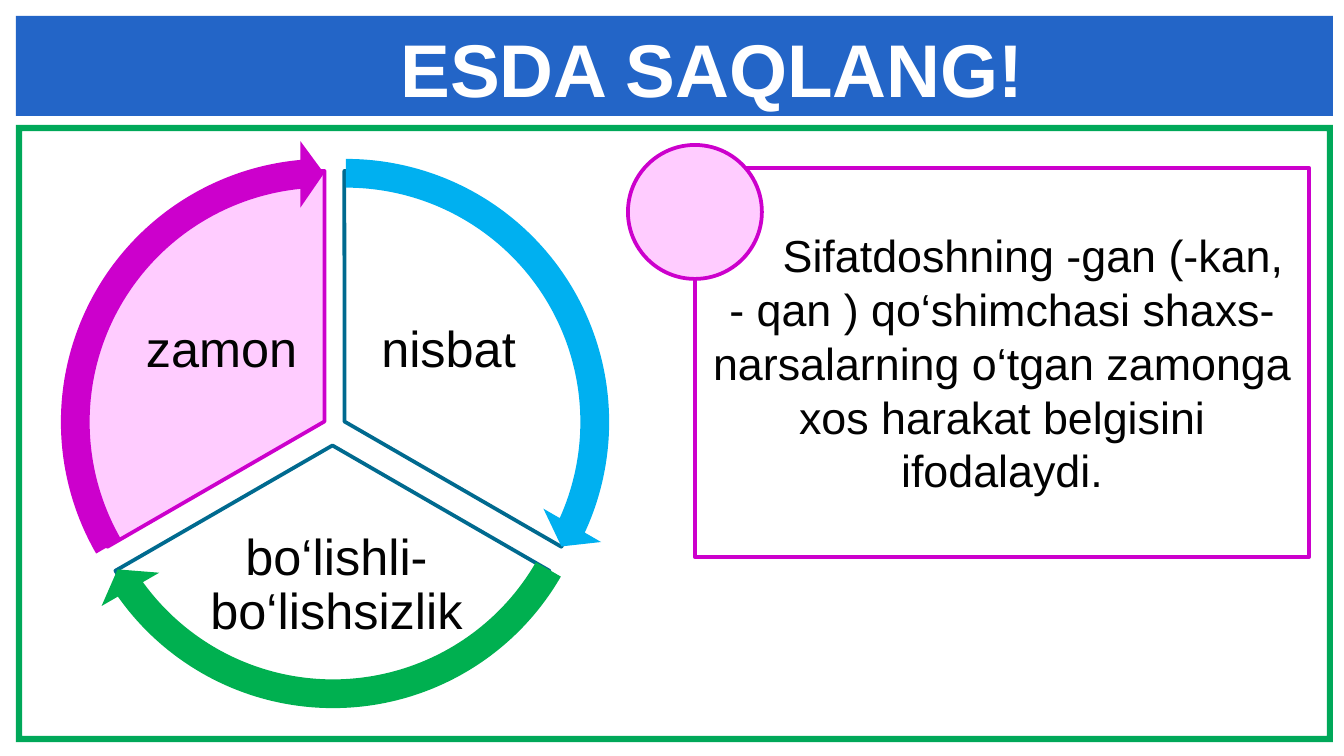
"""Build the ESDA SAQLANG! slide: a three-part cycle beside a rule box."""
import pptx
import pptx.dml.color
import pptx.enum.shapes
import pptx.enum.text
import pptx.util

PX = 6803.57
KIND = pptx.enum.shapes.MSO_SHAPE
ANCHOR = pptx.enum.text.MSO_ANCHOR
ALIGN = pptx.enum.text.PP_ALIGN
color = pptx.dml.color.RGBColor.from_string


def add_shape(kind, place, fill, line=None, weight=2, adjust=()):
    shape = page.shapes.add_shape(kind, *[round(n * PX) for n in place])
    shape.shadow.inherit = False
    shape.fill.solid()
    shape.fill.fore_color.rgb = color(fill)
    if line:
        shape.line.color.rgb = color(line)
        shape.line.width = pptx.util.Pt(weight)
    else:
        shape.line.fill.background()
    for index, value in enumerate(adjust):
        shape.adjustments[index] = value
    return shape


def write(box, text, size, ink, frame_format, para_format, bold=False):
    frame = box.text_frame
    for name, value in frame_format.items():
        setattr(frame, name, value)
    para = frame.paragraphs[0]
    for name, value in para_format.items():
        setattr(para, name, value)
    span = para.add_run()
    span.text = text
    span.font.color.rgb = color(ink)
    for name, value in {"name": "Arial", "size": pptx.util.Pt(size), "bold": bold}.items():
        setattr(span.font, name, value)
    return para


deck = pptx.Presentation()
deck.slide_width, deck.slide_height = round(1344 * PX), round(756 * PX)
page = deck.slides.add_slide(deck.slide_layouts[5])

add_shape(KIND.FRAME, (16, 125, 1317, 617), "00A859", adjust=[0.01])
add_shape(KIND.RECTANGLE, (16, 16, 1317, 100), "2365C7")

parts = [
    ("nisbat", (94, 171), (162, 18), "FFFFFF", "006A8F", (359, 277, 179, 149)),
    ("bo‘lishli-bo‘lishsizlik", (82, 195), (18, 90), "FFFFFF", "006A8F", (202, 520, 269, 132)),
    ("zamon", (74, 171), (90, 162), "FFCCFF", "CC00CC", (132, 277, 179, 149)),
]
margins = {f"margin_{side}": round(5 * PX) for side in ("left", "top", "right", "bottom")}
for label, corner, angles, fill, line, place in parts:
    add_shape(KIND.PIE, (*corner, 501, 501), fill, line, adjust=angles)
    box = page.shapes.add_textbox(*[round(n * PX) for n in place])
    write(box, label, 27, "020202",
          {"word_wrap": True, "vertical_anchor": ANCHOR.MIDDLE, **margins},
          {"alignment": ALIGN.CENTER, "line_spacing": 0.9})

arrows = [
    ((64, 140), (14.73, 161.99), "00B0F0"),
    ((51, 163), (86.72, 18), "00B050"),
    ((42, 140), (158.73, 90), "CC00CC"),
]
for corner, (end, start), fill in arrows:
    add_shape(KIND.CIRCULAR_ARROW, (*corner, 564, 564), fill,
              adjust=(0.051, 3.28, end, start, 0.059))

rule = add_shape(KIND.RECTANGLE, (695, 168, 614, 389), "FFFFFF", "CC00CC", 2.25)
para = write(rule, "Sifatdoshning -gan (-kan, - qan ) qo‘shimchasi shaxs-narsalarning "
             "o‘tgan zamonga xos harakat belgisini ifodalaydi.", 24, "020202",
             {"word_wrap": True, "vertical_anchor": ANCHOR.MIDDLE},
             {"alignment": ALIGN.CENTER})
para._p.get_or_add_pPr().set("indent", str(round(62 * PX)))
add_shape(KIND.OVAL, (628, 145, 134, 134), "FFCCFF", "CC00CC")

title = page.shapes.title
page.shapes._spTree.append(title._element)
for name, value in {"left": 387, "top": 16, "width": 656, "height": 103}.items():
    setattr(title, name, round(value * PX))
write(title, "ESDA SAQLANG!", 40, "FFFFFF",
      {"word_wrap": False, "vertical_anchor": ANCHOR.TOP,
       "auto_size": pptx.enum.text.MSO_AUTO_SIZE.NONE},
      {"alignment": ALIGN.LEFT}, bold=True)

deck.save("out.pptx")
